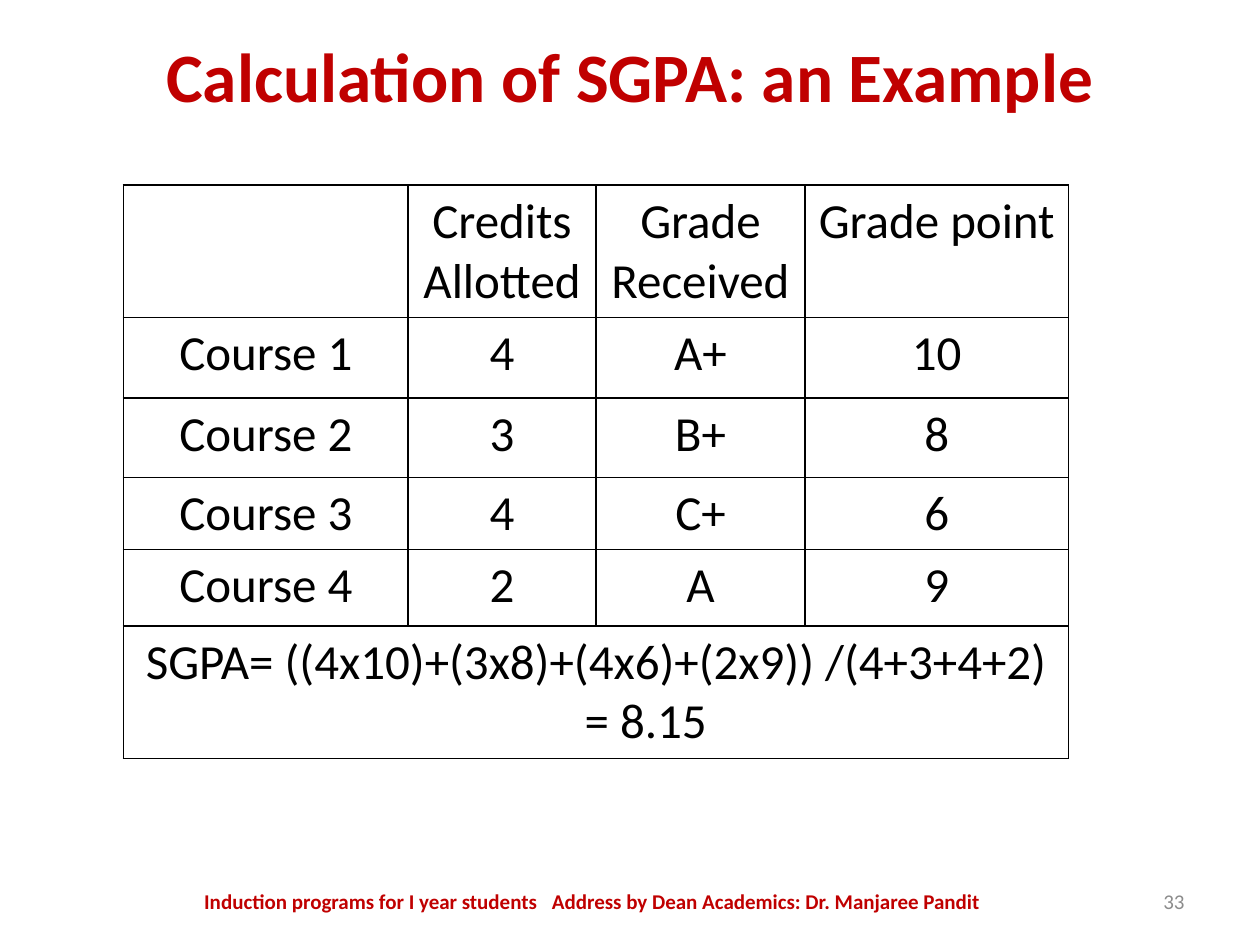
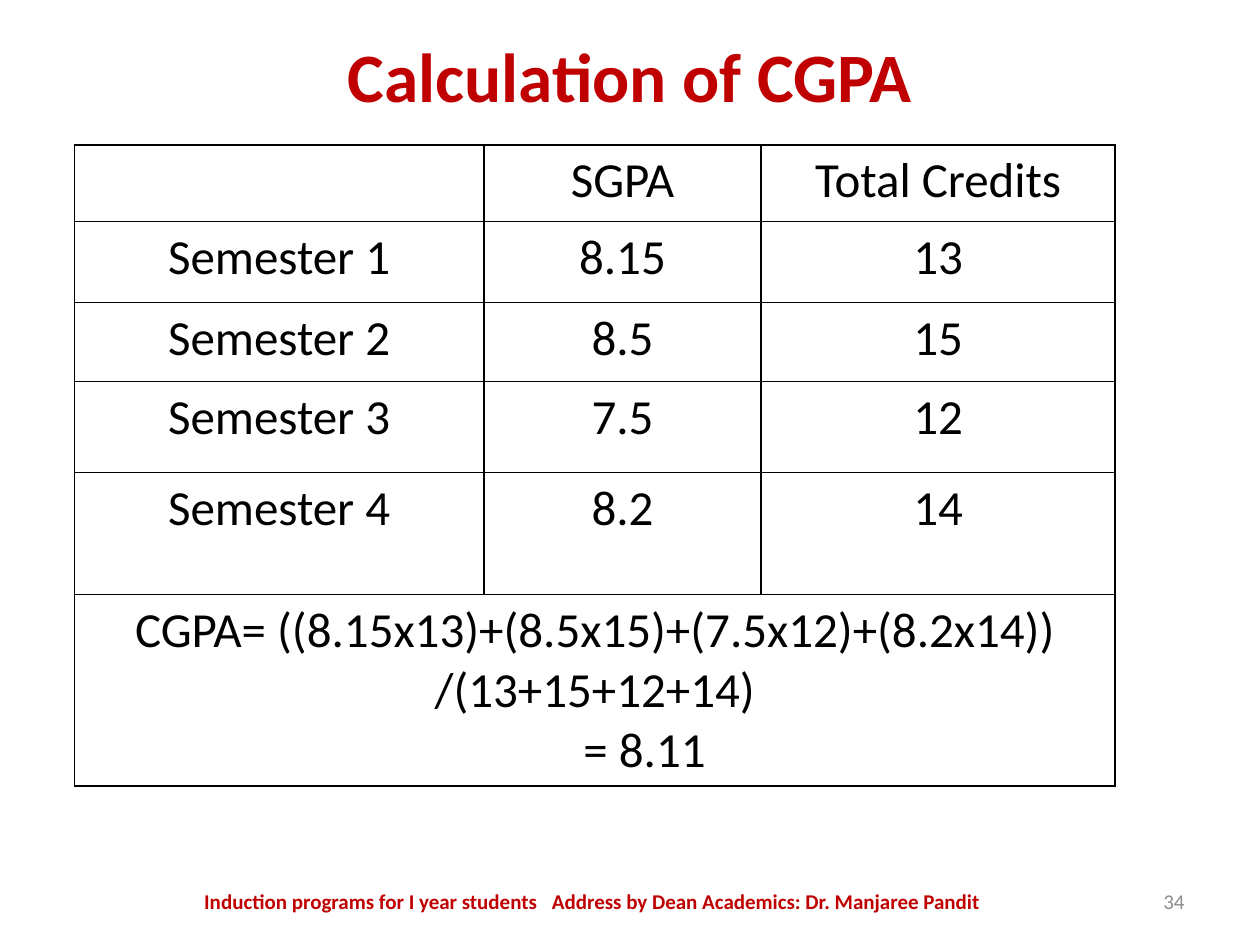
from dataclasses import dataclass

from lxml.etree import SubElement
from pptx import Presentation
from pptx.dml.color import RGBColor
from pptx.enum.text import MSO_ANCHOR, PP_ALIGN
from pptx.oxml.ns import qn
from pptx.slide import Slide
from pptx.table import _Cell
from pptx.text.text import TextFrame
from pptx.util import Inches, Pt

FONT = "Calibri"
RED = RGBColor(0xC0, 0x00, 0x00)
GREY = RGBColor(0x8C, 0x8C, 0x8C)
BLACK = RGBColor(0x00, 0x00, 0x00)
FOOTER_PARTS = (
    "Induction programs for I year students",
    " ",
    "Address by Dean Academics: Dr. Manjaree Pandit",
)
FOOTER_GAP = Pt(5.4)
RESULT_INDENT = Inches(0.79)


@dataclass(frozen=True)
class Box:
    left: float
    top: float
    width: float
    height: float


@dataclass(frozen=True)
class TextStyle:
    size: float
    color: RGBColor
    bold: bool = False
    align: PP_ALIGN = PP_ALIGN.CENTER
    anchor: MSO_ANCHOR = MSO_ANCHOR.MIDDLE


@dataclass(frozen=True)
class GradeSlide:
    title: str
    number: int
    left: float
    top: float
    column_widths: tuple[float, ...]
    row_heights: tuple[float, ...]
    rows: tuple[tuple[str, ...], ...]
    formula: str
    result: str


TITLE_BOX = Box(0.5, 0.26, 9, 1.25)
FOOTER_BOX = Box(0.33, 6.95, 8.74, 0.4)
NUMBER_BOX = Box(7.17, 6.95, 2.33, 0.4)
TITLE_STYLE = TextStyle(39.6, RED, bold=True, anchor=MSO_ANCHOR.TOP)
FOOTER_STYLE = TextStyle(12, RED, bold=True)
NUMBER_STYLE = TextStyle(12, GREY, align=PP_ALIGN.RIGHT)
CELL_STYLE = TextStyle(28, BLACK, anchor=MSO_ANCHOR.TOP)

GRADE_SLIDES = (
    GradeSlide(
        title="Calculation of SGPA: an Example",
        number=33,
        left=0.98,
        top=1.47,
        column_widths=(2.26, 1.49, 1.66, 2.09),
        row_heights=(1.05, 0.64, 0.63, 0.57, 0.61, 1.05),
        rows=(
            ("", "Credits\nAllotted", "Grade\nReceived", "Grade point"),
            ("Course 1", "4", "A+", "10"),
            ("Course 2", "3", "B+", "8"),
            ("Course 3", "4", "C+", "6"),
            ("Course 4", "2", "A", "9"),
        ),
        formula="SGPA= ((4x10)+(3x8)+(4x6)+(2x9)) /(4+3+4+2)",
        result="= 8.15",
    ),
    GradeSlide(
        title="Calculation of CGPA",
        number=34,
        left=0.59,
        top=1.15,
        column_widths=(3.25, 2.2, 2.81),
        row_heights=(0.61, 0.64, 0.63, 0.72, 0.97, 1.52),
        rows=(
            ("", "SGPA", "Total Credits"),
            ("Semester 1", "8.15", "13"),
            ("Semester 2", "8.5", "15"),
            ("Semester 3", "7.5", "12"),
            ("Semester 4", "8.2", "14"),
        ),
        formula="CGPA= ((8.15x13)+(8.5x15)+(7.5x12)+(8.2x14)) /(13+15+12+14)",
        result="= 8.11",
    ),
)


def format_text(text_frame: TextFrame, style: TextStyle) -> None:
    for paragraph in text_frame.paragraphs:
        paragraph.alignment = style.align
        for run in paragraph.runs:
            run.font.name = FONT
            run.font.size = Pt(style.size)
            run.font.bold = style.bold
            run.font.color.rgb = style.color


def add_text(slide: Slide, box: Box, parts: tuple[str, ...], style: TextStyle) -> TextFrame:
    shape = slide.shapes.add_textbox(
        Inches(box.left), Inches(box.top), Inches(box.width), Inches(box.height)
    )
    text_frame = shape.text_frame
    text_frame.word_wrap = True
    text_frame.vertical_anchor = style.anchor
    text_frame.margin_top = text_frame.margin_bottom = 0
    for part in parts:
        text_frame.paragraphs[0].add_run().text = part
    format_text(text_frame, style)
    return text_frame


def add_footer(slide: Slide, number: int) -> None:
    footer = add_text(slide, FOOTER_BOX, FOOTER_PARTS, FOOTER_STYLE)
    gap_properties = footer.paragraphs[0].runs[1]._r.get_or_add_rPr()
    gap_properties.set("spc", str(round(FOOTER_GAP.pt * 100)))
    add_text(slide, NUMBER_BOX, (str(number),), NUMBER_STYLE)


def style_cell(cell: _Cell) -> None:
    properties = cell._tc.get_or_add_tcPr()
    for side in ("a:lnL", "a:lnR", "a:lnT", "a:lnB"):
        line = SubElement(properties, qn(side), w=str(Pt(1)))
        fill = SubElement(line, qn("a:solidFill"))
        SubElement(fill, qn("a:srgbClr"), val=str(BLACK))
    cell.fill.background()
    cell.vertical_anchor = CELL_STYLE.anchor
    format_text(cell.text_frame, CELL_STYLE)


def add_grade_table(slide: Slide, content: GradeSlide) -> None:
    widths, heights = content.column_widths, content.row_heights
    table = slide.shapes.add_table(
        len(heights), len(widths), Inches(content.left), Inches(content.top),
        Inches(sum(widths)), Inches(sum(heights)),
    ).table
    table.first_row = table.horz_banding = False
    for column, width in zip(table.columns, widths):
        column.width = Inches(width)
    for row, height in zip(table.rows, heights):
        row.height = Inches(height)
    for row, texts in zip(table.rows, content.rows):
        for cell, text in zip(row.cells, texts):
            cell.text_frame.text = text

    last_row = len(heights) - 1
    formula_cell = table.cell(last_row, 0)
    formula_cell.merge(table.cell(last_row, len(widths) - 1))
    formula_cell.text_frame.text = f"{content.formula}\n{content.result}"
    result_paragraph = formula_cell.text_frame.paragraphs[1]
    result_paragraph._p.get_or_add_pPr().set("marL", str(RESULT_INDENT))
    for cell in table.iter_cells():
        style_cell(cell)


def main() -> None:
    presentation = Presentation()
    presentation.slide_width = Inches(10)
    presentation.slide_height = Inches(7.5)
    for content in GRADE_SLIDES:
        slide = presentation.slides.add_slide(presentation.slide_layouts[6])
        add_text(slide, TITLE_BOX, (content.title,), TITLE_STYLE)
        add_footer(slide, content.number)
        add_grade_table(slide, content)
    presentation.save("out.pptx")


if __name__ == "__main__":
    main()
